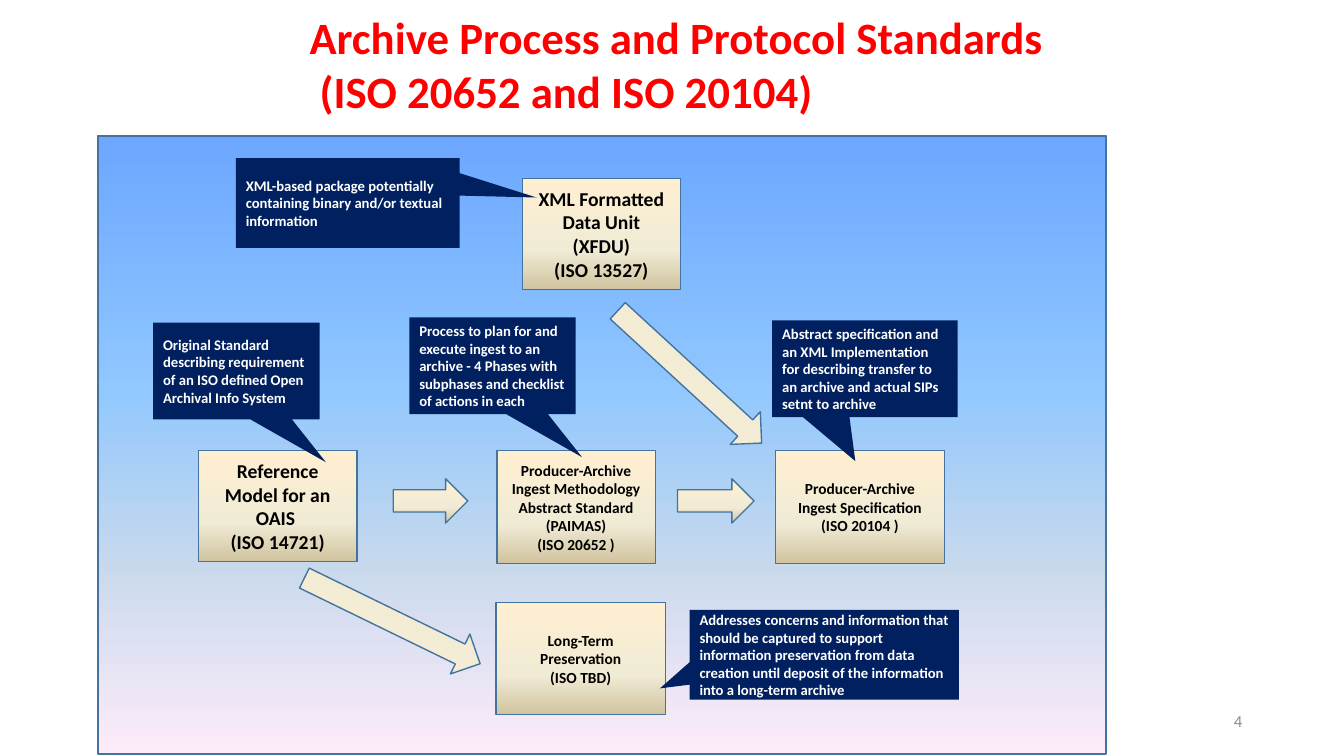
"""Build a slide that maps the archive process and protocol standards."""
from dataclasses import dataclass

from lxml.etree import SubElement
from pptx import Presentation
from pptx.dml.color import RGBColor
from pptx.enum.shapes import MSO_SHAPE as Preset
from pptx.enum.text import MSO_ANCHOR as Anchor, MSO_AUTO_SIZE as AutoSize, PP_ALIGN as Align
from pptx.oxml.ns import qn
from pptx.util import Inches, Pt


@dataclass(frozen=True)
class Theme:
    font: str = "Calibri"
    title: str = "FF0000"
    outline: str = "43739E"
    callout: str = "002060"
    light: str = "FFFFFF"
    dark: str = "000000"
    muted: str = "8C8C8C"
    sky: tuple = ((0, "5E9EFF", 90), (40, "85C2FF", 90), (70, "C4D6EB", 90), (100, "FFEBFA", 90))
    sand: tuple = ((0, "FFEFD1", 100), (65, "F0EBD5", 100), (100, "D1C39F", 100))
    title_size: float = 32
    large: float = 14
    small: float = 11
    note: float = 10.5
    number: float = 12


THEME = Theme()
WIDTH, HEIGHT = 13.33, 7.5

# Places are left, top, width, height in percent of the slide.
TITLE = ["Archive Process and Protocol Standards", " (ISO 20652 and ISO 20104)"]
TITLE_PLACE = (22.28, 0.67, 57.09, 19.73)
PANEL_PLACE = (7.28, 18, 75.02, 81.73)
NUMBER, NUMBER_PLACE = "4", (70.67, 92.67, 22.51, 5.33)

MAIN_ROW, ARROW_ROW = 59.6, 63.33
BOX, WIDE_BOX, ARROW, LONG_ARROW = 11.78, 12.6, 5.87, 14.55

STANDARDS = [
    (["Reference Model for an OAIS ", "(ISO 14721)"],
     (14.78, MAIN_ROW, BOX, 14.67), THEME.large),
    (["Producer-Archive Ingest Methodology Abstract Standard", "(PAIMAS)", "(ISO 20652 )"],
     (36.98, MAIN_ROW, BOX, 14.93), THEME.small),
    (["Producer-Archive Ingest Specification", "(ISO 20104 )"],
     (57.69, MAIN_ROW, WIDE_BOX, 14.93), THEME.small),
    (["Long-Term Preservation", "(ISO TBD)"],
     (36.91, 79.73, WIDE_BOX, 14.8), THEME.small),
    (["XML Formatted Data Unit (XFDU)", "(ISO 13527)"],
     (38.86, 23.6, BOX, 14.67), THEME.large),
]
FLOWS = [
    ((29.26, ARROW_ROW, 5.55, ARROW), 0),
    ((50.41, ARROW_ROW, 5.7, ARROW), 0),
    ((44.04, 46.93, LONG_ARROW, ARROW), 42.6),
    ((21.91, 79.2, LONG_ARROW, ARROW), 26),
]
EXPLANATIONS = [
    ("Abstract specification and an XML Implementation for describing transfer to an archive "
     "and actual SIPs setnt to archive", (57.46, 42.4, 13.8, 12.8), (-0.052, 0.954)),
    ("Process to plan for and execute ingest to an archive - 4 Phases with subphases and "
     "checklist of actions in each", (30.46, 42, 12.38, 12.8), (0.538, 0.944)),
    ("Original Standard describing requirement of an ISO defined Open Archival Info System",
     (11.4, 42.67, 12.38, 12.8), (0.538, 0.944)),
    ("Addresses concerns and information that should be captured to support information "
     "preservation from data creation until deposit of the information into a long-term archive",
     (51.31, 80.67, 20.03, 11.87), (-0.61, 0.375)),
    ("XML-based package potentially containing binary and/or textual information",
     (17.55, 20.93, 16.65, 11.87), (0.844, -0.062)),
]


def to_emu(place):
    return [Inches(share * side / 100) for share, side in zip(place, (WIDTH, HEIGHT) * 2)]


def write(holder, lines, size, color, align=Align.LEFT, anchor=Anchor.MIDDLE, bold=True):
    frame = holder.text_frame
    frame.word_wrap = True
    frame.auto_size = AutoSize.NONE
    frame.vertical_anchor = anchor
    frame.text = "\n".join(lines)
    for paragraph in frame.paragraphs:
        paragraph.alignment = align
        paragraph.font.name = THEME.font
        paragraph.font.size = Pt(size)
        paragraph.font.bold = bold
        paragraph.font.color.rgb = RGBColor.from_string(color)


def paint(shape, stops):
    shape.fill.gradient()
    shape.fill.gradient_angle = 270
    stop_list = shape._element.spPr.find(qn("a:gradFill")).find(qn("a:gsLst"))
    for stop in list(stop_list):
        stop_list.remove(stop)
    for position, color, opacity in stops:
        stop = SubElement(stop_list, qn("a:gs"), pos=str(position * 1000))
        tint = SubElement(stop, qn("a:srgbClr"), val=color)
        if opacity < 100:
            SubElement(tint, qn("a:alpha"), val=str(opacity * 1000))


def add_figure(slide, preset, place, stops):
    figure = slide.shapes.add_shape(preset, *to_emu(place))
    figure.shadow.inherit = False
    paint(figure, stops)
    figure.line.color.rgb = RGBColor.from_string(THEME.outline)
    figure.line.width = Pt(1)
    return figure


def add_standard(slide, lines, place, size):
    box = add_figure(slide, Preset.RECTANGLE, place, THEME.sand)
    write(box, lines, size, THEME.dark, Align.CENTER)


def add_flow(slide, place, turn):
    arrow = add_figure(slide, Preset.RIGHT_ARROW, place, THEME.sand)
    arrow.rotation = turn
    if turn:
        arrow._element.spPr.xfrm.set("flipV", "1")


def add_explanation(slide, text, place, tip):
    callout = slide.shapes.add_shape(Preset.RECTANGULAR_CALLOUT, *to_emu(place))
    callout.shadow.inherit = False
    callout.adjustments[0], callout.adjustments[1] = tip
    callout.fill.solid()
    callout.fill.fore_color.rgb = RGBColor.from_string(THEME.callout)
    callout.line.fill.background()
    write(callout, [text], THEME.note, THEME.light)


def main():
    deck = Presentation()
    deck.slide_width, deck.slide_height = Inches(WIDTH), Inches(HEIGHT)
    slide = deck.slides.add_slide(deck.slide_layouts[5])

    title = slide.shapes.title
    title.left, title.top, title.width, title.height = to_emu(TITLE_PLACE)
    write(title, TITLE, THEME.title_size, THEME.title, anchor=Anchor.TOP)

    add_figure(slide, Preset.RECTANGLE, PANEL_PLACE, THEME.sky)
    for standard in STANDARDS:
        add_standard(slide, *standard)
    for flow in FLOWS:
        add_flow(slide, *flow)
    for explanation in EXPLANATIONS:
        add_explanation(slide, *explanation)

    number = slide.shapes.add_textbox(*to_emu(NUMBER_PLACE))
    write(number, [NUMBER], THEME.number, THEME.muted, Align.RIGHT, bold=False)
    deck.save("out.pptx")


if __name__ == "__main__":
    main()
